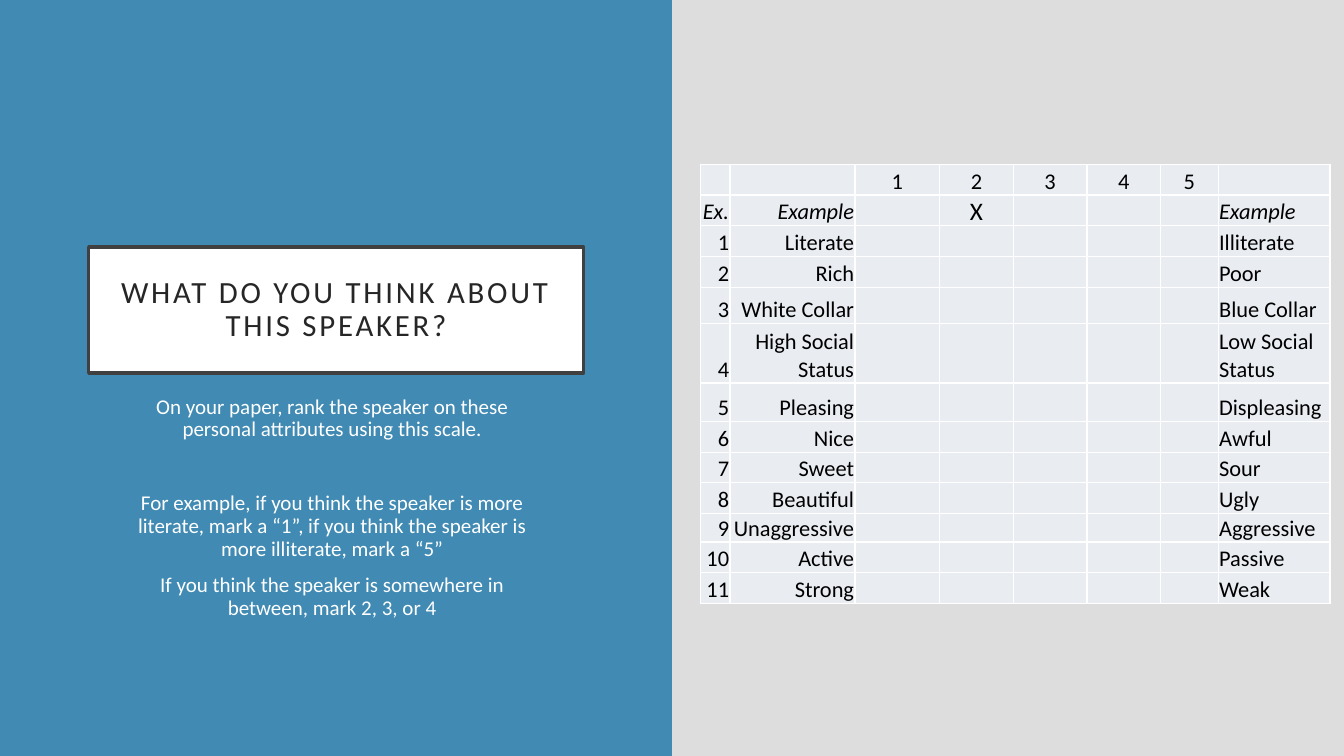
from dataclasses import dataclass
from typing import Any, Optional

from lxml.etree import SubElement
from pptx import Presentation
from pptx.dml.color import RGBColor
from pptx.enum.shapes import MSO_SHAPE
from pptx.enum.text import MSO_ANCHOR, MSO_AUTO_SIZE, PP_ALIGN
from pptx.oxml.ns import qn
from pptx.util import Inches, Pt

WIDTH, HEIGHT = Inches(13.33), Inches(7.5)


@dataclass(frozen=True)
class Theme:
    font: str = "Calibri"
    background: str = "DDDDDD"
    panel: str = "418AB3"
    white: str = "FFFFFF"
    frame: str = "404040"
    title: str = "262626"
    cell: str = "E9EDF2"
    black: str = "000000"
    title_size: int = 22
    body_size: int = 15
    table_size: int = 16
    mark_size: int = 18


@dataclass(frozen=True)
class Box:
    """Left, top, width and height in percent of the slide."""
    left: float
    top: float
    width: float
    height: float

    def emu(self) -> tuple[int, int, int, int]:
        return across(self.left), down(self.top), across(self.width), down(self.height)


@dataclass(frozen=True)
class Scale:
    """One row of the table, from one attribute to its opposite."""
    number: str
    left: str
    right: str
    height: float = 4.07
    italic: bool = False


@dataclass(frozen=True)
class Note:
    text: str
    before: float = 10


THEME = Theme()
PANEL = Box(0, 0, 50, 100)
TITLE = Box(6.6, 32.67, 36.83, 16.67)
BODY = Box(9.15, 51.73, 31.13, 32)
TABLE = Box(52.14, 21.73, 46.83, 57.87)
MARK = Box(71.42, 25.2, 2.85, 5.33)
COLUMNS = (2.18, 9.3, 6.3, 5.48, 5.48, 5.48, 4.28, 8.33)
HEADER = ("", "", "1", "2", "3", "4", "5", "")
HEADER_HEIGHT = 4.07
SCALES = (
    Scale("Ex.", "Example", "Example", italic=True),
    Scale("1", "Literate", "Illiterate"),
    Scale("2", "Rich", "Poor"),
    Scale("3", "White Collar", "Blue Collar", 4.8),
    Scale("4", "High Social Status", "Low Social Status", 7.87),
    Scale("5", "Pleasing", "Displeasing", 5.07),
    Scale("6", "Nice", "Awful"),
    Scale("7", "Sweet", "Sour"),
    Scale("8", "Beautiful", "Ugly"),
    Scale("9", "Unaggressive", "Aggressive", 3.47),
    Scale("10", "Active", "Passive"),
    Scale("11", "Strong", "Weak"),
)
NOTES = (
    Note("On your paper, rank the speaker on these personal attributes using this scale.", 0),
    Note("For example, if you think the speaker is more literate, mark a “1”, "
         "if you think the speaker is more illiterate, mark a “5”", 36.5),
    Note("If you think the speaker is somewhere in between, mark 2, 3, or 4"),
)


def across(percent: float) -> int:
    return round(WIDTH * percent / 100)


def down(percent: float) -> int:
    return round(HEIGHT * percent / 100)


def apply(target: Any, values: dict[str, Any]) -> None:
    for name, value in values.items():
        setattr(target, name, value)


def write(p: Any, text: str, size: int, color: str, italic: bool = False, **layout: Any) -> Any:
    """Fill a paragraph with one run and return the run."""
    apply(p, layout)
    r = p.add_run()
    r.text = text
    apply(r.font, {"name": THEME.font, "size": Pt(size), "italic": italic})
    r.font.color.rgb = RGBColor.from_string(color)
    return r


def add_rectangle(s: Any, box: Box, fill: str, line: Optional[str] = None) -> Any:
    sp = s.shapes.add_shape(MSO_SHAPE.RECTANGLE, *box.emu())
    sp.shadow.inherit = False
    sp.fill.solid()
    sp.fill.fore_color.rgb = RGBColor.from_string(fill)
    if line:
        sp.line.color.rgb = RGBColor.from_string(line)
        sp.line.width = Pt(2.5)
    else:
        sp.line.fill.background()
    return sp


def add_title(s: Any) -> None:
    tf = add_rectangle(s, TITLE, THEME.white, THEME.frame).text_frame
    margins = dict.fromkeys(("margin_left", "margin_top", "margin_right", "margin_bottom"), Inches(0.2))
    apply(tf, {**margins, "word_wrap": True, "vertical_anchor": MSO_ANCHOR.MIDDLE})
    r = write(tf.paragraphs[0], "WHAT DO YOU THINK ABOUT THIS SPEAKER?", THEME.title_size,
              THEME.title, alignment=PP_ALIGN.CENTER, line_spacing=0.9)
    r.font._element.set("spc", "200")


def add_notes(s: Any) -> None:
    tf = s.shapes.add_textbox(*BODY.emu()).text_frame
    tf.word_wrap = True
    for i, note in enumerate(NOTES):
        p = tf.add_paragraph() if i else tf.paragraphs[0]
        write(p, note.text, THEME.body_size, THEME.white, alignment=PP_ALIGN.CENTER,
              line_spacing=0.9, space_before=Pt(note.before))


def format_cell(cell: Any, text: str, align: PP_ALIGN, italic: bool) -> None:
    edge = Inches(0.01)
    apply(cell, {"margin_left": edge, "margin_top": edge, "margin_right": edge,
                 "margin_bottom": 0, "vertical_anchor": MSO_ANCHOR.BOTTOM})
    tc_pr = cell._tc.get_or_add_tcPr()
    for side in ("lnL", "lnR", "lnT", "lnB"):
        line = SubElement(tc_pr, qn(f"a:{side}"), w=str(Pt(1)))
        SubElement(SubElement(line, qn("a:solidFill")), qn("a:srgbClr"), val=THEME.white)
    cell.fill.solid()
    cell.fill.fore_color.rgb = RGBColor.from_string(THEME.cell)
    p = cell.text_frame.paragraphs[0]
    if text:
        write(p, text, THEME.table_size, THEME.black, italic, alignment=align)
    else:
        SubElement(p._p, qn("a:endParaRPr"), sz=str(THEME.table_size * 100))


def add_scale_table(s: Any) -> None:
    table = s.shapes.add_table(len(SCALES) + 1, len(COLUMNS), *TABLE.emu()).table
    apply(table, {"first_row": False, "horz_banding": False})
    for column, width in zip(table.columns, COLUMNS):
        column.width = across(width)
    heights = (HEADER_HEIGHT, *(scale.height for scale in SCALES))
    for row, height in zip(table.rows, heights):
        row.height = down(height)
    for c, text in enumerate(HEADER):
        format_cell(table.cell(0, c), text, PP_ALIGN.CENTER, False)
    aligns = (PP_ALIGN.RIGHT,) * 2 + (PP_ALIGN.CENTER,) * 5 + (PP_ALIGN.LEFT,)
    for r, scale in enumerate(SCALES, 1):
        texts = (scale.number, scale.left, *[""] * 5, scale.right)
        for c, (text, align) in enumerate(zip(texts, aligns)):
            format_cell(table.cell(r, c), text, align, scale.italic)


def add_mark(s: Any) -> None:
    tf = s.shapes.add_textbox(*MARK.emu()).text_frame
    apply(tf, {"word_wrap": False, "auto_size": MSO_AUTO_SIZE.SHAPE_TO_FIT_TEXT})
    write(tf.paragraphs[0], "X", THEME.mark_size, THEME.black)


def main() -> None:
    prs = Presentation()
    apply(prs, {"slide_width": WIDTH, "slide_height": HEIGHT})
    s = prs.slides.add_slide(prs.slide_layouts[6])
    s.background.fill.solid()
    s.background.fill.fore_color.rgb = RGBColor.from_string(THEME.background)
    add_rectangle(s, PANEL, THEME.panel)
    add_title(s)
    add_scale_table(s)
    add_notes(s)
    add_mark(s)
    prs.save("out.pptx")


if __name__ == "__main__":
    main()
